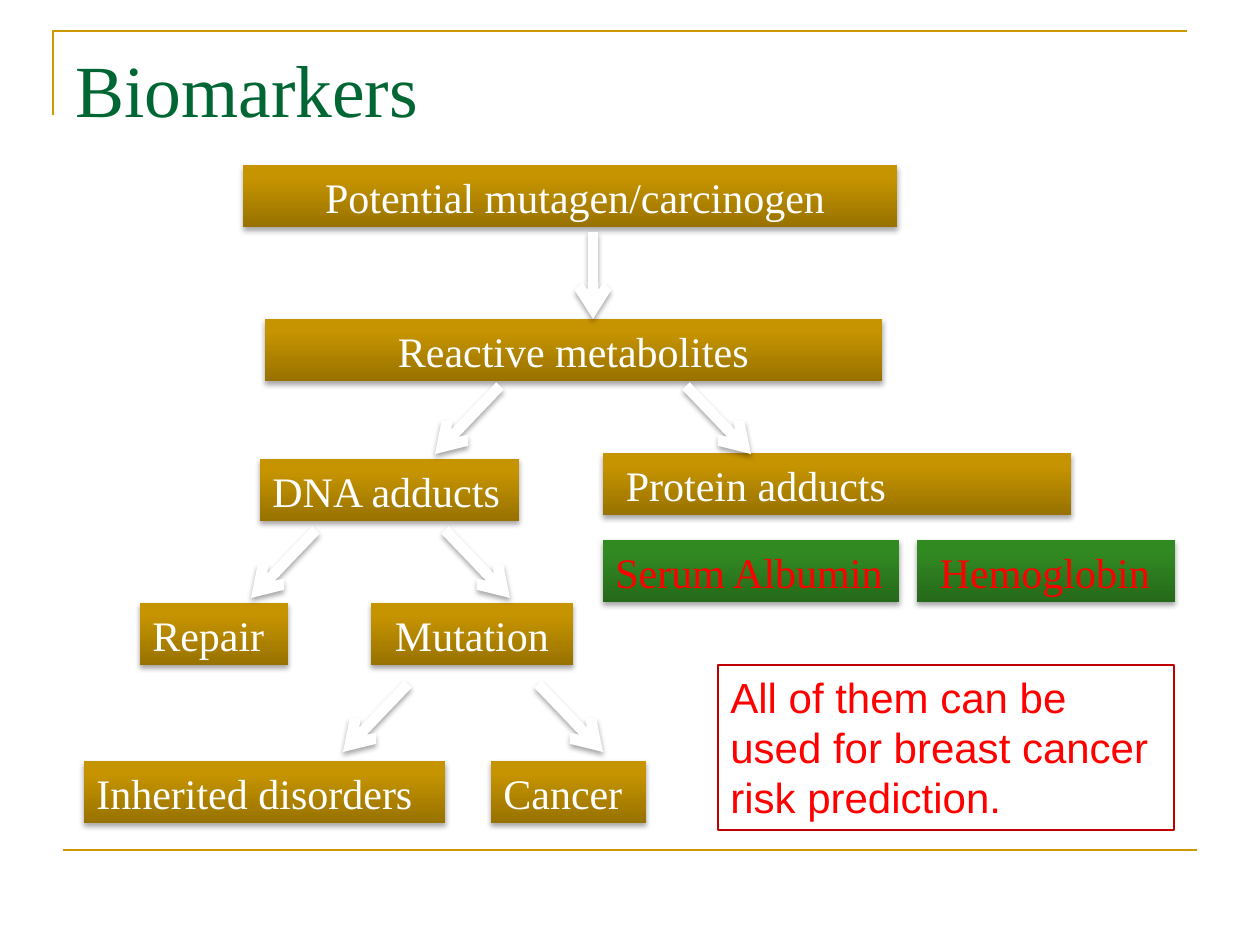
from lxml import etree
from pptx import Presentation
from pptx.dml.color import RGBColor
from pptx.enum.shapes import MSO_CONNECTOR, MSO_SHAPE
from pptx.enum.text import MSO_ANCHOR, PP_ALIGN
from pptx.oxml.ns import qn
from pptx.util import Emu, Pt

STRAIGHT = MSO_CONNECTOR.STRAIGHT
RECTANGLE = MSO_SHAPE.RECTANGLE
LEFT, CENTER = PP_ALIGN.LEFT, PP_ALIGN.CENTER
TOP = MSO_ANCHOR.TOP

EMU_PER_PX = 914400 / 126
SERIF, SANS = "Times New Roman", "Arial"
COLORS = {
    "frame": "CC9900", "title": "006633", "white": "FFFFFF", "red": "FF0000",
    "note_border": "C00000", "shadow": "000000",
    "gold_dark": "987200", "gold": "C69400",
    "green_dark": "26691A", "green": "318922",
}
BOX_HEIGHT = 62

# text, left, top, width, alignment, gradient, text colour
BOXES = [
    (" Potential mutagen/carcinogen", 159, 0, 654, CENTER, "gold", "white"),
    ("Reactive metabolites", 181, 154, 617, CENTER, "gold", "white"),
    ("DNA adducts", 176, 294, 259, LEFT, "gold", "white"),
    (" Protein adducts", 519, 288, 468, LEFT, "gold", "white"),
    ("Serum Albumin", 519, 375, 296, LEFT, "green", "red"),
    (" Hemoglobin", 833, 375, 258, LEFT, "green", "red"),
    ("Repair", 56, 438, 148, LEFT, "gold", "white"),
    ("Mutation", 287, 438, 202, CENTER, "gold", "white"),
    ("Inherited disorders", 0, 596, 361, LEFT, "gold", "white"),
    ("Cancer", 407, 596, 155, LEFT, "gold", "white"),
]
# start x, start y, horizontal run, vertical run
ARROWS = [
    (509, 67, 0, 87),
    (416, 221, -65, 68), (602, 221, 65, 68),
    (232, 365, -65, 68), (361, 365, 65, 68),
    (324, 519, -65, 68), (454, 519, 65, 68),
]


def px(*lengths):
    return [Emu(round(length * EMU_PER_PX)) for length in lengths]


def rgb(name):
    return RGBColor.from_string(COLORS[name])


def set_line(shape, color, width):
    shape.line.color.rgb = rgb(color)
    shape.line.width = Pt(width)


def set_effects(shape, shadow=False):
    """Replace inherited effects by none, or by a soft shadow below."""
    properties = shape._element.spPr
    for old in properties.findall(qn("a:effectLst")):
        properties.remove(old)
    effects = etree.SubElement(properties, qn("a:effectLst"))
    if shadow:
        outer = etree.SubElement(effects, qn("a:outerShdw"), blurRad=str(Pt(3.1)),
                                 dist=str(Pt(1.8)), dir="5400000", rotWithShape="0")
        color = etree.SubElement(outer, qn("a:srgbClr"), val=COLORS["shadow"])
        etree.SubElement(color, qn("a:alpha"), val="35000")


def write_text(shape, text, size=24, font=SERIF, color="white", align=LEFT):
    frame = shape.text_frame
    frame.word_wrap = True
    frame.vertical_anchor = TOP
    paragraph = frame.paragraphs[0]
    paragraph.alignment = align
    run = paragraph.add_run()
    run.text = text
    run.font.size = Pt(size)
    run.font.name = font
    run.font.color.rgb = rgb(color)


def add_line(slide, start_x, start_y, end_x, end_y, color, width):
    line = slide.shapes.add_connector(STRAIGHT, *px(start_x, start_y, end_x, end_y))
    set_line(line, color, width)
    set_effects(line)
    return line


def add_arrow(slide, x, y, run_x, run_y):
    arrow = add_line(slide, x, y, x + run_x, y + run_y, "white", 6)
    etree.SubElement(arrow.line._get_or_add_ln(), qn("a:tailEnd"), type="arrow")
    set_effects(arrow, shadow=True)


def add_box(slide, left, top, width, height, gradient):
    box = slide.shapes.add_shape(RECTANGLE, *px(left, top, width, height))
    box.fill.gradient()
    box.fill.gradient_angle = 90
    stops = zip(box.fill.gradient_stops, (0, 0.8), (gradient + "_dark", gradient))
    for stop, position, color in stops:
        stop.position = position
        stop.color.rgb = rgb(color)
    box.line.fill.background()
    set_effects(box, shadow=True)
    return box


def add_frame(slide, left, top, width, height):
    """Draw the corner rule at the top and the offset rule at the bottom."""
    points = [(left, top + 84), (left, top), (left + width, top)]
    builder = slide.shapes.build_freeform(*points[0], scale=EMU_PER_PX)
    builder.add_line_segments(points[1:], close=False)
    corner = builder.convert_to_shape()
    corner.fill.background()
    set_line(corner, "frame", 1.5)
    set_effects(corner)
    bottom = top + height
    add_line(slide, left + 10, bottom, left + 10 + width, bottom, "frame", 1.5)


def add_title(slide, left, top, width, height):
    title = slide.shapes.add_textbox(*px(left, top, width, height))
    write_text(title, "Biomarkers", size=42, color="title")


def add_flow_diagram(slide, left, top):
    for text, x, y, width, align, gradient, color in BOXES:
        box = add_box(slide, left + x, top + y, width, BOX_HEIGHT, gradient)
        write_text(box, text, color=color, align=align)
    for x, y, run_x, run_y in ARROWS:
        add_arrow(slide, left + x, top + y, run_x, run_y)


def add_note(slide, left, top, width, height):
    note = slide.shapes.add_shape(RECTANGLE, *px(left, top, width, height))
    note.fill.background()
    set_line(note, "note_border", 0.75)
    set_effects(note)
    write_text(note, "All of them can be used for breast cancer risk prediction.",
               font=SANS, color="red")


def main():
    presentation = Presentation()
    presentation.slide_width, presentation.slide_height = px(1260, 945)
    slide = presentation.slides.add_slide(presentation.slide_layouts[6])
    add_frame(slide, 53, 31, 1134, 819)
    add_title(slide, 63, 38, 1134, 157)
    add_flow_diagram(slide, 84, 165)
    add_note(slide, 718, 665, 456, 165)
    presentation.save("out.pptx")


if __name__ == "__main__":
    main()
